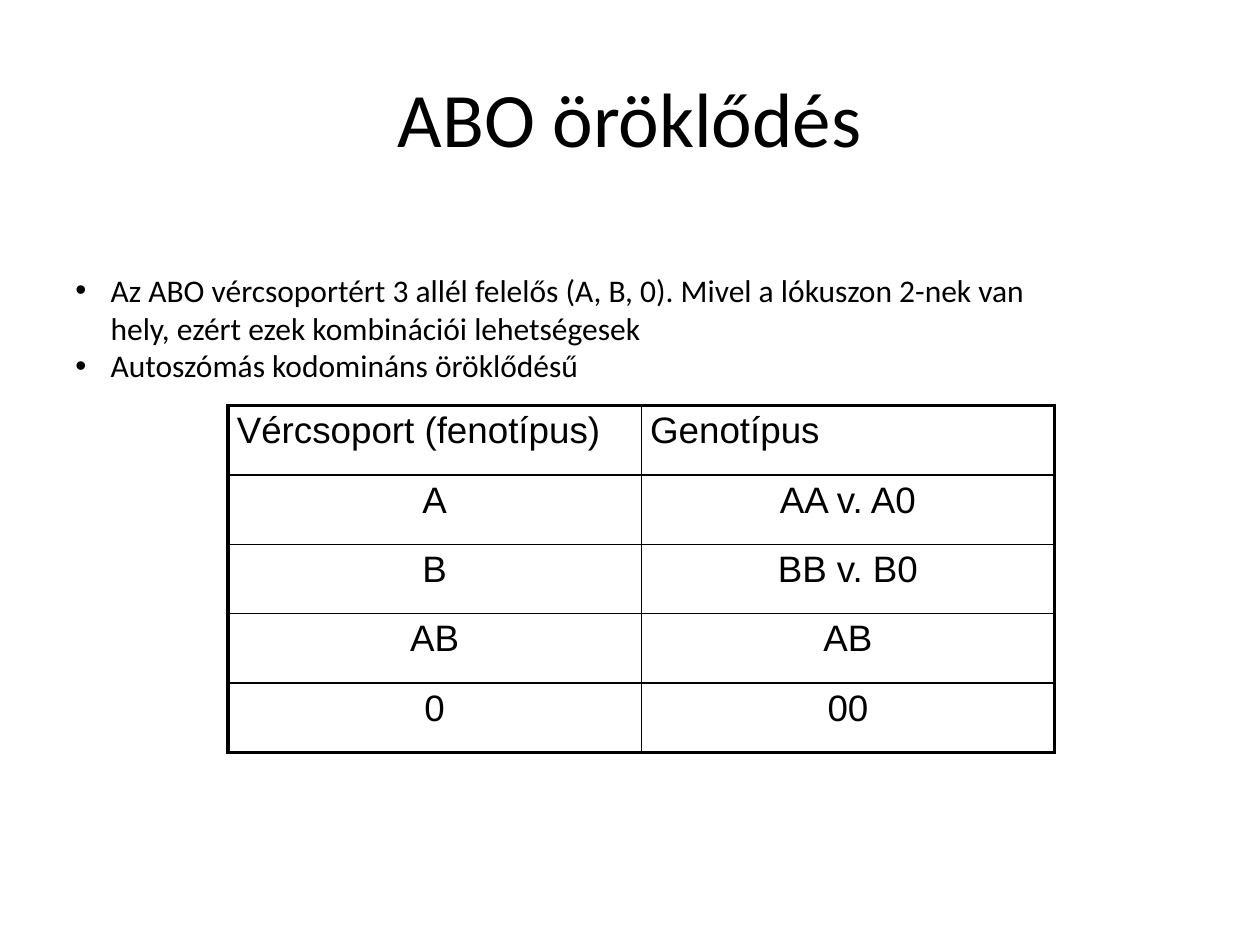
from lxml.etree import SubElement
from pptx import Presentation
from pptx.dml.color import RGBColor
from pptx.enum.text import MSO_ANCHOR, PP_ALIGN
from pptx.oxml.ns import qn
from pptx.util import Inches, Pt

TITLE = "ABO öröklődés"
BULLETS = [
    "Az ABO vércsoportért 3 allél felelős (A, B, 0). Mivel a lókuszon 2-nek van "
    "hely, ezért ezek kombinációi lehetségesek",
    "Autoszómás kodomináns öröklődésű",
]
BLOOD_GROUPS = [
    ("Vércsoport (fenotípus)", "Genotípus"),
    ("A", "AA v. A0"),
    ("B", "BB v. B0"),
    ("AB", "AB"),
    ("0", "00"),
]
BLACK = "000000"
OUTER_LINE, INNER_LINE = 2.25, 1
COLUMN_WIDTH, ROW_HEIGHT = 3.28, 0.55


def format_paragraph(paragraph, font_name, size, alignment=PP_ALIGN.LEFT):
    paragraph.alignment = alignment
    for run in paragraph.runs:
        run.font.name = font_name
        run.font.size = Pt(size)
        run.font.color.rgb = RGBColor.from_string(BLACK)


def add_text(slide, box, lines, size, alignment, anchor):
    shape = slide.shapes.add_textbox(*map(Inches, box))
    text_frame = shape.text_frame
    text_frame.word_wrap = True
    text_frame.vertical_anchor = anchor
    text_frame.text = "\n".join(lines)
    for paragraph in text_frame.paragraphs:
        format_paragraph(paragraph, "Calibri", size, alignment)
    return text_frame


def add_bullet(paragraph, indent):
    properties = paragraph._p.get_or_add_pPr()
    properties.set("marL", str(Inches(indent)))
    properties.set("indent", str(-Inches(indent)))
    SubElement(properties, qn("a:buFont"), typeface="Arial")
    SubElement(properties, qn("a:buChar"), char="•")


def set_borders(cell, widths):
    properties = cell._tc.get_or_add_tcPr()
    for side, width in widths.items():
        line = SubElement(properties, qn(f"a:ln{side}"), w=str(Pt(width)))
        fill = SubElement(line, qn("a:solidFill"))
        SubElement(fill, qn("a:srgbClr"), val=BLACK)


presentation = Presentation()
presentation.slide_width, presentation.slide_height = Inches(10), Inches(7.5)
slide = presentation.slides.add_slide(presentation.slide_layouts[6])

# Title
add_text(slide, (0.5, 0.3, 9, 1.25), [TITLE], 44, PP_ALIGN.CENTER, MSO_ANCHOR.MIDDLE)

# Blood group table
row_count, column_count = len(BLOOD_GROUPS), len(BLOOD_GROUPS[0])
table = slide.shapes.add_table(
    row_count, column_count, Inches(1.81), Inches(3.22),
    Inches(COLUMN_WIDTH * column_count), Inches(ROW_HEIGHT * row_count),
).table
table.first_row = table.horz_banding = False
for row_index, row in enumerate(BLOOD_GROUPS):
    for column_index, text in enumerate(row):
        cell = table.cell(row_index, column_index)
        cell.text_frame.text = text
        cell.margin_left = cell.margin_right = Inches(0.07)
        cell.margin_top = cell.margin_bottom = Inches(0.04)
        alignment = PP_ALIGN.CENTER if row_index else PP_ALIGN.LEFT
        format_paragraph(cell.text_frame.paragraphs[0], "Arial", 21, alignment)
        on_edge = {
            "L": column_index == 0,
            "R": column_index == column_count - 1,
            "T": row_index == 0,
            "B": row_index == row_count - 1,
        }
        set_borders(cell, {side: OUTER_LINE if edge else INNER_LINE
                           for side, edge in on_edge.items()})
        cell.fill.background()

# Bullets
bullet_frame = add_text(slide, (0.5, 2.1, 8.1, 1.01), BULLETS, 18,
                        PP_ALIGN.LEFT, MSO_ANCHOR.TOP)
for paragraph in bullet_frame.paragraphs:
    add_bullet(paragraph, 0.28)

presentation.save("out.pptx")
